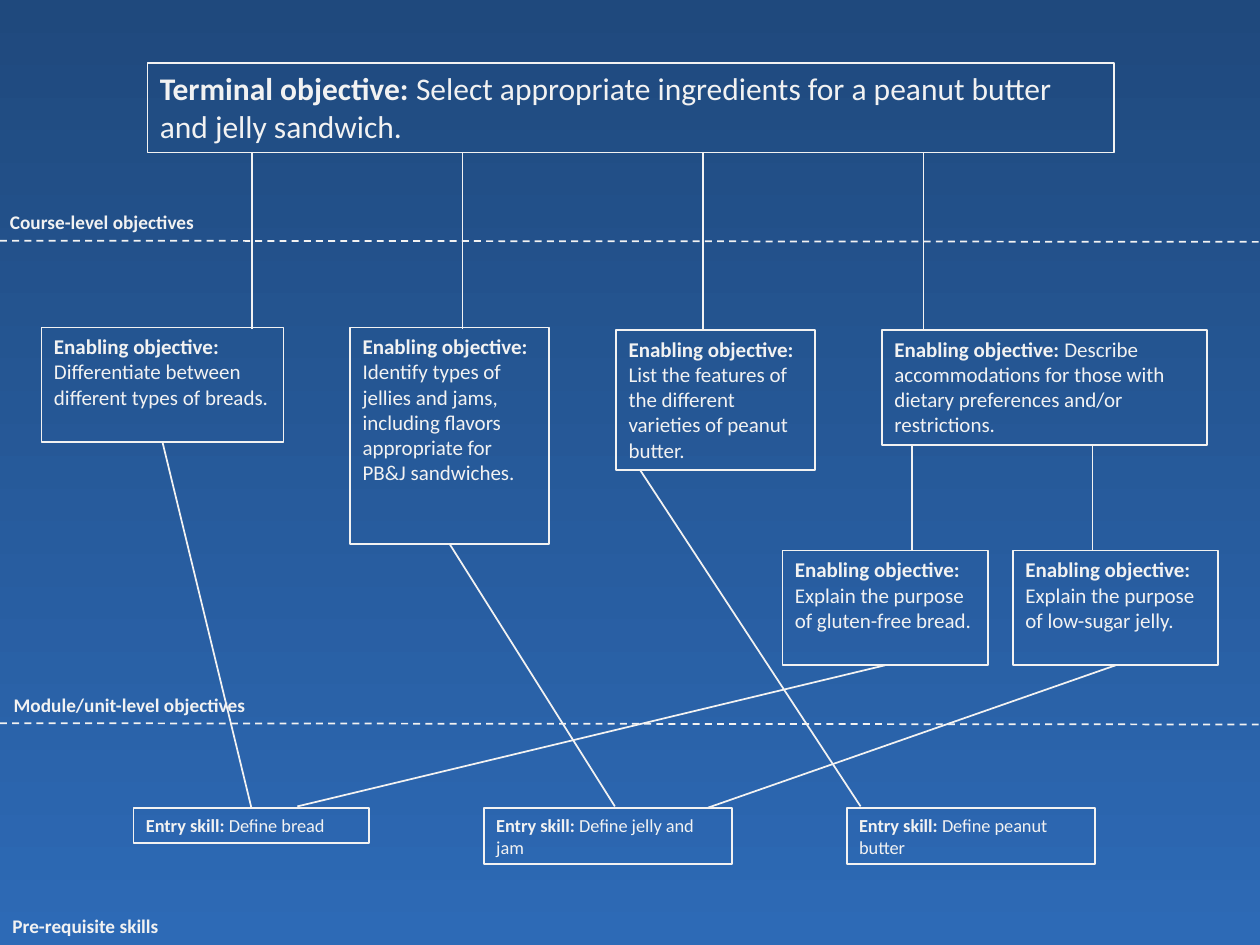
from dataclasses import dataclass
from typing import Optional

from lxml import etree
from pptx import Presentation
from pptx.dml.color import RGBColor
from pptx.enum import dml, shapes, text
from pptx.oxml.ns import qn
from pptx.util import Inches, Pt

COLORS = {"top": "1F497D", "bottom": "2D6AB6", "ink": "F2F2F2"}
FONT = "Calibri"
TOP, BOTTOM = 0, 2


@dataclass
class Box:
    name: str
    left: float
    top: float
    width: float
    height: float
    label: str
    wording: str
    size: float


@dataclass
class Link:
    start: tuple[float, float]
    end: tuple[float, float]
    upper: Optional[str] = None  # box whose bottom middle starts the link
    lower: Optional[str] = None  # box whose top middle ends the link
    dashed: bool = False


@dataclass
class Level:
    left: float
    top: float
    wording: str


def objective(name: str, left: float, top: float, width: float,
              height: float, wording: str) -> Box:
    return Box(name, left, top, width, height, "Enabling objective: ", wording, 12)


def entry(name: str, left: float, width: float, height: float, wording: str) -> Box:
    return Box(name, left, 6.41, width, height, "Entry skill: ", wording, 10.5)


BOXES = [
    Box("terminal", 1.17, 0.5, 7.67, 0.71, "Terminal objective: ",
        "Select appropriate ingredients for a peanut butter and jelly sandwich.", 18),
    objective("breads", 0.33, 2.6, 1.92, 0.91,
              "Differentiate between different types of breads."),
    objective("jellies", 2.78, 2.6, 1.58, 1.72,
              "Identify types of jellies and jams, including flavors "
              "appropriate for PB&J sandwiches."),
    objective("peanut butters", 4.89, 2.62, 1.58, 1.11,
              "List the features of the different varieties of peanut butter."),
    objective("diets", 7, 2.62, 2.58, 0.91,
              "Describe accommodations for those with dietary preferences "
              "and/or restrictions."),
    objective("gluten-free", 6.21, 4.37, 1.63, 0.91,
              "Explain the purpose of gluten-free bread."),
    objective("low-sugar", 8.04, 4.37, 1.63, 0.91,
              "Explain the purpose of low-sugar jelly."),
    entry("bread", 1.06, 1.87, 0.28, "Define bread"),
    entry("jelly", 3.84, 1.97, 0.45, "Define jelly and jam"),
    entry("peanut butter", 6.72, 1.97, 0.45, "Define peanut butter"),
]

LINKS = [
    *(Link((x, 1.21), (x, 2.61)) for x in (2, 3.67, 5.58, 7.33)),
    *(Link((x, 3.53), (x, 4.37)) for x in (7.24, 8.67)),
    Link((1.29, 3.51), (2, 6.41), "breads", "bread"),
    Link((3.57, 4.32), (4.88, 6.4), "jellies"),
    Link((5.08, 3.73), (6.83, 6.4)),
    Link((7.02, 5.28), (2.36, 6.4), "gluten-free"),
    Link((8.86, 5.28), (5.62, 6.41), "low-sugar"),
    *(Link((0, y), (10, y + 0.01), dashed=True) for y in (1.91, 5.74)),
]

LEVELS = [
    Level(-0.02, 1.62, "Course-level objectives"),
    Level(0.01, 5.45, "Module/unit-level objectives"),
    Level(0, 7.21, "Pre-requisite skills"),
]


def color(name: str) -> RGBColor:
    return RGBColor.from_string(COLORS[name])


def write(shape, runs: list[tuple[str, bool]], size: float) -> None:
    """Fill the shape with one left-aligned paragraph of (wording, bold) runs."""
    frame_format = {"word_wrap": True, "auto_size": text.MSO_AUTO_SIZE.NONE,
                    "vertical_anchor": text.MSO_ANCHOR.TOP}
    for attribute, value in frame_format.items():
        setattr(shape.text_frame, attribute, value)
    paragraph = shape.text_frame.paragraphs[0]
    paragraph.alignment = text.PP_ALIGN.LEFT
    for wording, bold in runs:
        run = paragraph.add_run()
        run.text = wording
        for attribute, value in {"name": FONT, "size": Pt(size), "bold": bold}.items():
            setattr(run.font, attribute, value)
        run.font.color.rgb = color("ink")


def style_line(line) -> None:
    line.color.rgb = color("ink")
    line.width = Pt(1)


def draw_box(slide, box: Box):
    shape = slide.shapes.add_shape(
        shapes.MSO_SHAPE.RECTANGLE, Inches(box.left), Inches(box.top),
        Inches(box.width), Inches(box.height))
    shape.shadow.inherit = False
    shape.fill.background()
    style_line(shape.line)
    write(shape, [(box.label, True), (box.wording, False)], box.size)
    return shape


def draw_link(slide, link: Link, drawn: dict) -> None:
    connector = slide.shapes.add_connector(
        shapes.MSO_CONNECTOR.STRAIGHT,
        *(Inches(value) for value in link.start + link.end))
    style_line(connector.line)
    if link.dashed:
        connector.line.dash_style = dml.MSO_LINE.DASH
    etree.SubElement(connector._element.spPr, qn("a:effectLst"))
    if link.upper:
        connector.begin_connect(drawn[link.upper], BOTTOM)
    if link.lower:
        connector.end_connect(drawn[link.lower], TOP)


def draw_level(slide, level: Level) -> None:
    shape = slide.shapes.add_textbox(
        Inches(level.left), Inches(level.top), Inches(3.42), Inches(0.29))
    write(shape, [(level.wording, True)], 11)


def paint_background(slide) -> None:
    fill = slide.background.fill
    fill.gradient()
    fill.gradient_angle = 270
    for stop, name, position in zip(fill.gradient_stops, ("top", "bottom"), (0, 1)):
        stop.color.rgb = color(name)
        stop.position = position


def main() -> None:
    presentation = Presentation()
    presentation.slide_width, presentation.slide_height = Inches(10), Inches(7.5)
    slide = presentation.slides.add_slide(presentation.slide_layouts[6])
    paint_background(slide)
    drawn = {box.name: draw_box(slide, box) for box in BOXES}
    for link in LINKS:
        draw_link(slide, link, drawn)
    for level in LEVELS:
        draw_level(slide, level)
    presentation.save("out.pptx")


if __name__ == "__main__":
    main()
